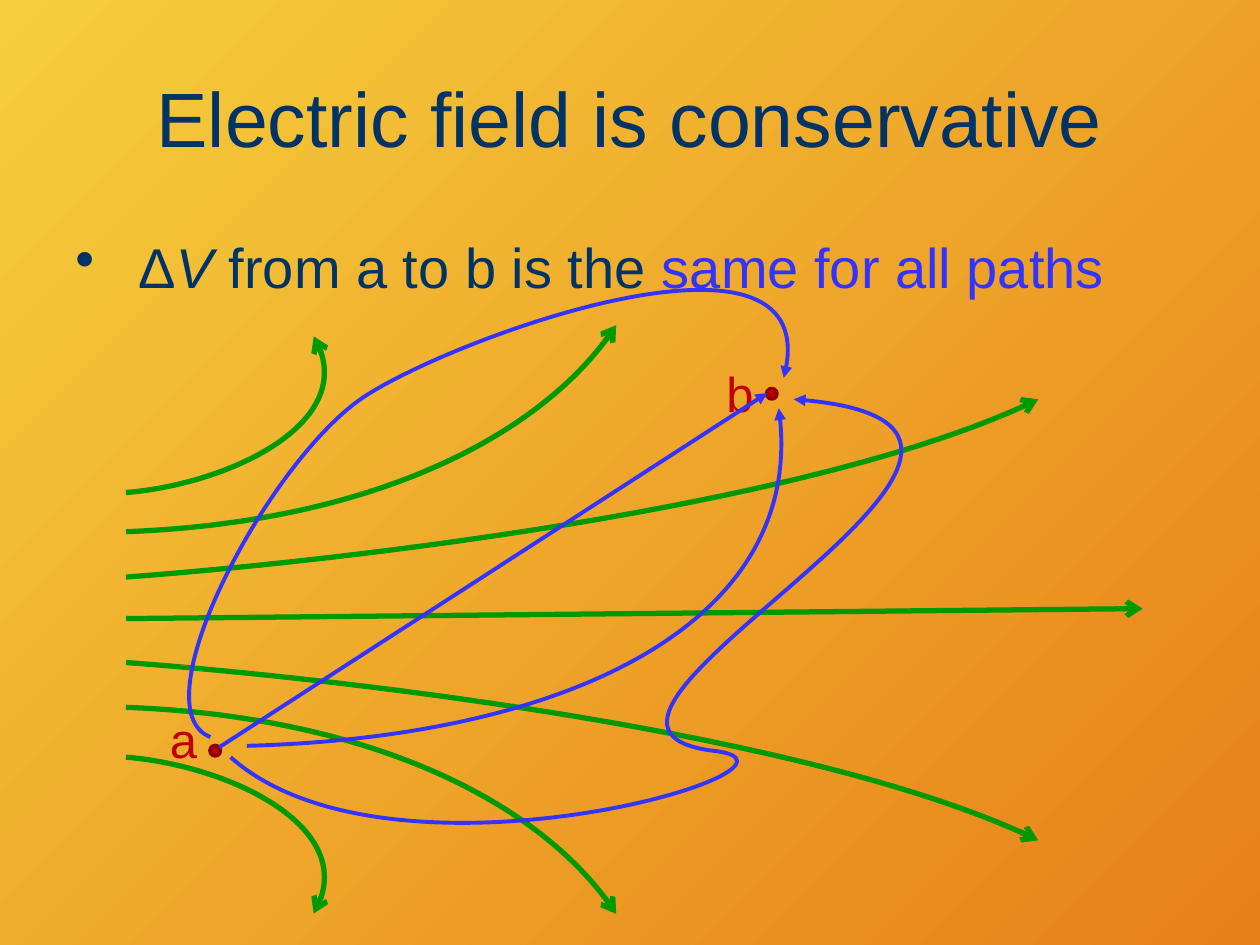
from dataclasses import dataclass

from lxml.etree import SubElement as Sub
from pptx import Presentation
from pptx.dml.color import RGBColor as Rgb
from pptx.enum.shapes import MSO_CONNECTOR as Conn, MSO_SHAPE as Kind
from pptx.enum.text import MSO_ANCHOR as Anchor, MSO_AUTO_SIZE as Auto, PP_ALIGN as Align
from pptx.oxml.ns import qn
from pptx.util import Pt

NAVY = Rgb(0x00, 0x33, 0x66)
BLUE = Rgb(0x33, 0x33, 0xFF)
GREEN = Rgb(0x00, 0x99, 0x00)
RED = Rgb(0xC0, 0x00, 0x00)
DARK = Rgb(0x8E, 0x00, 0x00)
GOLD = Rgb(0xF5, 0xCE, 0x3D)
RUST = Rgb(0xE8, 0x80, 0x18)


@dataclass(frozen=True)
class Style:
    color: Rgb
    width: float
    head: str


@dataclass(frozen=True)
class Field:
    points: tuple
    total: float

    def mirror(self) -> tuple:
        return tuple((x, self.total - y) for x, y in self.points)


@dataclass(frozen=True)
class Spot:
    name: str
    x: float
    y: float
    left: float
    top: float


FLUX = Style(GREEN, 3, "arrow")
PATH = Style(BLUE, 2.25, "triangle")

FIELDS = (
    Field(((72, 281.5), (128, 277), (208, 240.5), (179.3, 192.2)), 714.2),
    Field(((72, 303.8), (206.6, 298.8), (311, 249.1), (352.1, 185.8)), 708),
    Field(((72, 329.8), (198, 320.4), (468.7, 288.7), (593.3, 228.2)), 708.4),
)
SPOTS = (
    Spot("a", 120, 426, 90, 402),
    Spot("b", 438, 222, 408, 204),
)
ROUTES = (
    ((141.1, 426.2), (326.2, 421.2), (462.2, 353.5), (445, 233.3)),
    ((131.8, 432.7), (223.9, 514.8), (481.7, 437.8), (408.2, 429.1),
     (281.5, 414), (656.6, 242.6), (453.6, 228.2)),
    ((120.2, 421.2), (77.8, 404.6), (155.5, 259.2), (210.2, 225.4),
     (265, 190.8), (474.5, 115.9), (447.8, 216)),
)


def ink(shape, style: Style) -> None:
    shape.line.color.rgb = style.color
    shape.line.width = Pt(style.width)
    line = shape.element.spPr.find(qn("a:ln"))
    Sub(line, qn("a:tailEnd"), type=style.head)


def curve(shapes, points: tuple, style: Style) -> None:
    start, *rest = [(Pt(x), Pt(y)) for x, y in points]
    pen = shapes.build_freeform(*start)
    pen.add_line_segments(rest, close=False)
    shape = pen.convert_to_shape()
    track = next(shape.element.iter(qn("a:path")))
    steps = track.findall(qn("a:lnTo"))
    for i in range(0, len(steps), 3):
        bend = Sub(track, qn("a:cubicBezTo"))
        for step in steps[i:i + 3]:
            bend.append(step[0])
            track.remove(step)
    shape.fill.background()
    shape.shadow.inherit = False
    ink(shape, style)


def ray(shapes, start: tuple, end: tuple, style: Style) -> None:
    line = shapes.add_connector(Conn.STRAIGHT, *map(Pt, start + end))
    ink(line, style)
    Sub(line.element.spPr, qn("a:effectLst"))


def dot(shapes, spot: Spot) -> None:
    shape = shapes.add_shape(Kind.OVAL, Pt(spot.x), Pt(spot.y), Pt(6), Pt(6))
    shape.fill.solid()
    shape.fill.fore_color.rgb = RED
    shape.line.color.rgb = DARK
    shape.line.width = Pt(2)
    shape.shadow.inherit = False


def label(shapes, spot: Spot) -> None:
    box = shapes.add_textbox(Pt(spot.left), Pt(spot.top), Pt(30), Pt(41))
    frame = box.text_frame
    frame.word_wrap = False
    frame.auto_size = Auto.SHAPE_TO_FIT_TEXT
    para = frame.paragraphs[0]
    para.text = spot.name
    para.font.name = "Arial"
    para.font.size = Pt(28)
    para.font.color.rgb = RED


def head(slide) -> None:
    title = slide.shapes.title
    title.left, title.top, title.width, title.height = map(Pt, (36, 21.6, 648, 90))
    frame = title.text_frame
    frame.vertical_anchor = Anchor.MIDDLE
    para = frame.paragraphs[0]
    para.text = "Electric field is conservative"
    para.alignment = Align.CENTER
    para.font.name = "Arial"
    para.font.size = Pt(44)
    para.font.color.rgb = NAVY


def claim(shapes) -> None:
    box = shapes.add_textbox(Pt(36), Pt(126), Pt(648), Pt(48))
    frame = box.text_frame
    frame.word_wrap = True
    frame.margin_top = Pt(7)
    para = frame.paragraphs[0]
    para.font.name = "Arial"
    para.font.size = Pt(32)
    for text, color, slant in (
        ("Δ", NAVY, False),
        ("V", NAVY, True),
        (" from a to b is the ", NAVY, False),
        ("same for all paths", BLUE, False),
    ):
        run = para.add_run()
        run.text = text
        run.font.color.rgb = color
        run.font.italic = slant
    props = para._p.get_or_add_pPr()
    props.set("marL", str(Pt(36)))
    props.set("indent", str(Pt(-36)))
    mark = props.makeelement(qn("a:buChar"), {"char": "•"})
    props.insert(0, mark)


def main() -> None:
    deck = Presentation()
    deck.slide_width, deck.slide_height = Pt(720), Pt(540)
    slide = deck.slides.add_slide(deck.slide_layouts[5])
    shapes = slide.shapes
    fill = slide.background.fill
    fill.gradient()
    fill.gradient_angle = 315
    for stop, color in zip(fill.gradient_stops, (GOLD, RUST)):
        stop.color.rgb = color
    head(slide)
    claim(shapes)
    for field in FIELDS:
        curve(shapes, field.points, FLUX)
        curve(shapes, field.mirror(), FLUX)
    ray(shapes, (72, 353.5), (653, 347.8), FLUX)
    for spot in SPOTS:
        dot(shapes, spot)
        label(shapes, spot)
    for route in ROUTES:
        curve(shapes, route, PATH)
    ray(shapes, (125.3, 427), (438.5, 224.6), PATH)
    deck.save("out.pptx")


if __name__ == "__main__":
    main()
